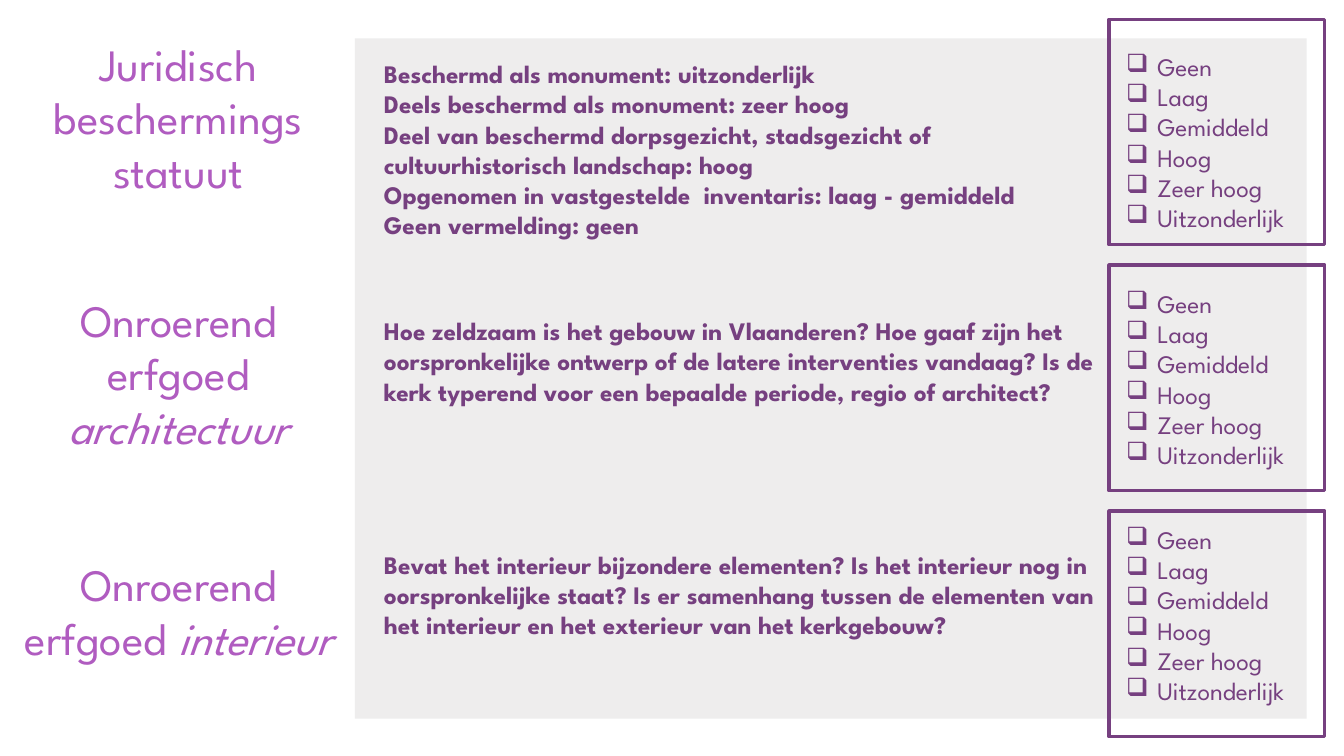
from pptx import Presentation
from pptx.dml.color import RGBColor
from pptx.enum.shapes import MSO_SHAPE
from pptx.enum.text import MSO_ANCHOR, PP_ALIGN
from pptx.oxml import parse_xml
from pptx.oxml.ns import nsdecls
from pptx.util import Inches, Pt

PURPLE = RGBColor(0x76, 0x40, 0x80)
LILAC = RGBColor(0xB0, 0x5C, 0xC0)
GREY = RGBColor(0xEE, 0xED, 0xED)
FONT = "League Spartan"

LABEL = {"name": FONT, "size": Pt(32)}
CRITERION = {"name": FONT, "size": Pt(18), "bold": True}
RATING = {"name": FONT, "size": Pt(18)}

RATINGS = ["Geen", "Laag", "Gemiddeld", "Hoog", "Zeer hoog", "Uitzonderlijk"]

# Each section: label, italic part, label middle, criterion lines, criterion top, checklist top
SECTIONS = [
    (["Juridisch beschermings", "statuut"], "", 1.16,
     ["Beschermd als monument: uitzonderlijk",
      "Deels beschermd als monument: zeer hoog",
      "Deel van beschermd dorpsgezicht, stadsgezicht of "
      "cultuurhistorisch landschap: hoog",
      "Opgenomen in vastgestelde  inventaris: laag - gemiddeld",
      "Geen vermelding: geen"], 0.53, 0.46),
    (["Onroerend erfgoed "], "architectuur", 3.7,
     ["Hoe zeldzaam is het gebouw in Vlaanderen? Hoe gaaf zijn het "
      "oorspronkelijke ontwerp of de latere interventies vandaag? Is de "
      "kerk typerend voor een bepaalde periode, regio of architect?"], 3.08, 2.81),
    (["Onroerend erfgoed "], "interieur", 6.06,
     ["Bevat het interieur bijzondere elementen? Is het interieur nog in "
      "oorspronkelijke staat? Is er samenhang tussen de elementen van "
      "het interieur en het exterieur van het kerkgebouw?"], 5.4, 5.15),
]


def add_rectangle(page, left, top, width, height, fill=None, line=None):
    shape = page.shapes.add_shape(MSO_SHAPE.RECTANGLE, Inches(left), Inches(top),
                                  Inches(width), Inches(height))
    shape.shadow.inherit = False
    if fill is None:
        shape.fill.background()
    else:
        shape.fill.solid()
        shape.fill.fore_color.rgb = fill
    if line is None:
        shape.line.fill.background()
    else:
        shape.line.color.rgb = line
        shape.line.width = Pt(2.25)


def add_text_frame(page, left, top, width, height):
    box = page.shapes.add_textbox(Inches(left), Inches(top), Inches(width), Inches(height))
    box.text_frame.word_wrap = True
    return box.text_frame


def add_span(para, text, style, color, italic=False):
    span = para.add_run()
    span.text = text
    for name, value in style.items():
        setattr(span.font, name, value)
    span.font.color.rgb = color
    if italic:
        span.font.italic = True


def add_lines(para, lines, style, color):
    for index, line in enumerate(lines):
        if index:
            para.add_line_break()
        add_span(para, line, style, color)


def add_label(page, middle, lines, italic_part):
    height = 1.7
    frame = add_text_frame(page, 0.01, middle - height / 2, 3.52, height)
    frame.vertical_anchor = MSO_ANCHOR.MIDDLE
    para = frame.paragraphs[0]
    para.alignment = PP_ALIGN.CENTER
    add_lines(para, lines, LABEL, LILAC)
    if italic_part:
        add_span(para, italic_part, LABEL, LILAC, italic=True)


def add_criterion(page, top, lines):
    frame = add_text_frame(page, 3.71, top, 7.29, 1.92)
    add_lines(frame.paragraphs[0], lines, CRITERION, PURPLE)


def add_checkbox_bullet(para):
    properties = para._p.get_or_add_pPr()
    properties.set("marL", str(Inches(0.31)))
    properties.set("indent", str(-Inches(0.31)))
    properties.append(parse_xml(f'<a:buChar {nsdecls("a")} char="❑"/>'))


def add_checklist(page, top):
    frame = add_text_frame(page, 11.07, top, 2.06, 1.92)
    for index, rating in enumerate(RATINGS):
        para = frame.add_paragraph() if index else frame.paragraphs[0]
        add_checkbox_bullet(para)
        add_span(para, rating, RATING, PURPLE)


def main():
    deck = Presentation()
    deck.slide_width, deck.slide_height = Inches(13.33), Inches(7.5)
    page = deck.slides.add_slide(deck.slide_layouts[6])

    # Grey panel and the three rating frames
    add_rectangle(page, 3.52, 0.38, 9.44, 6.75, fill=GREY)
    for row in range(len(SECTIONS)):
        add_rectangle(page, 11, 0.19 + 2.44 * row, 2.14, 2.24, line=PURPLE)

    # Label, criterion and checklist of each section
    for label, italic_part, middle, criterion, criterion_top, checklist_top in SECTIONS:
        add_label(page, middle, label, italic_part)
        add_criterion(page, criterion_top, criterion)
        add_checklist(page, checklist_top)

    deck.save("out.pptx")


if __name__ == "__main__":
    main()
